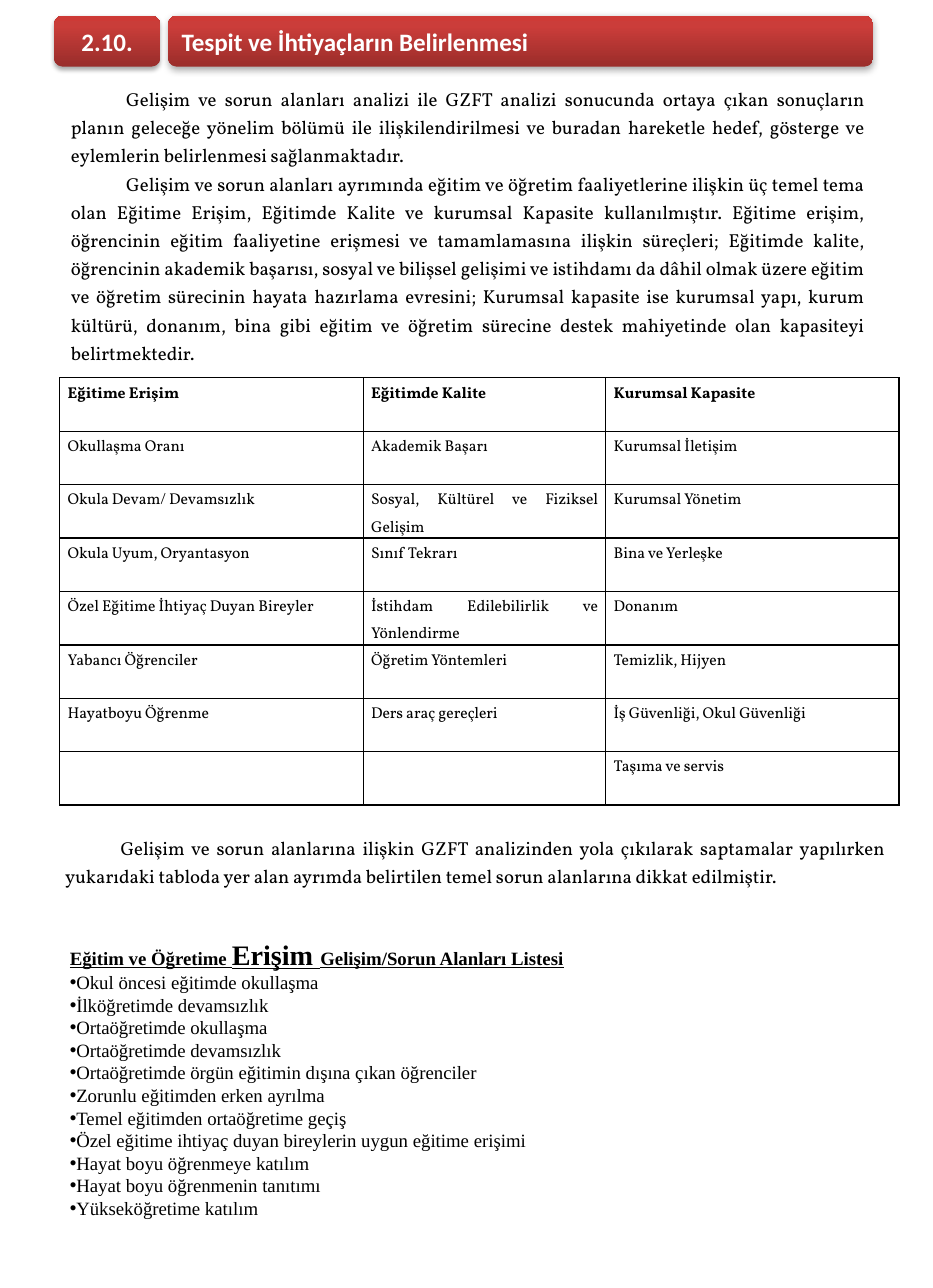
"""Build the findings and needs page of a school strategy plan."""
from typing import NamedTuple

from lxml import etree
from pptx import Presentation
from pptx.dml.color import RGBColor
from pptx.enum.shapes import MSO_SHAPE
from pptx.enum.text import MSO_ANCHOR, MSO_AUTO_SIZE, PP_ALIGN
from pptx.oxml.ns import qn
from pptx.util import Emu, Inches, Pt

ROUND = MSO_SHAPE.ROUNDED_RECTANGLE
MIDDLE = MSO_ANCHOR.MIDDLE
GROW = MSO_AUTO_SIZE.SHAPE_TO_FIT_TEXT
LEFT, CENTER, JUSTIFY = PP_ALIGN.LEFT, PP_ALIGN.CENTER, PP_ALIGN.JUSTIFY
BLACK = RGBColor(0x00, 0x00, 0x00)
WHITE = RGBColor(0xFF, 0xFF, 0xFF)
TITLE_REDS = (RGBColor(0x9B, 0x2D, 0x2A), RGBColor(0xCB, 0x3D, 0x3A), RGBColor(0xCE, 0x3B, 0x37))
BADGE_REDS = (RGBColor(0x99, 0x2D, 0x2B), RGBColor(0xC9, 0x3D, 0x39), RGBColor(0xCD, 0x3A, 0x36))
STOPS = (0, 80, 100)
WIDTH, HEIGHT = Inches(8.27), Inches(11.42)
BODY, LIST, HEAD = "Vollkorn", "Times New Roman", "Calibri"
FIRST, HANG = 0.49, -0.08
EDGES = ("a:lnL", "a:lnR", "a:lnT", "a:lnB")


class Box(NamedTuple):
    """A place on the slide, in percent of its width and height."""
    x: float
    y: float
    w: float
    h: float

    def emu(self) -> tuple:
        """Give left, top, width and height."""
        pairs = zip(self, (WIDTH, HEIGHT, WIDTH, HEIGHT))
        return tuple(Emu(round(full * part / 100)) for part, full in pairs)


class Part(NamedTuple):
    """A stretch of text in one size."""
    text: str
    size: float


class Banner(NamedTuple):
    """A red heading bar."""
    box: Box
    text: str
    reds: tuple
    blur: float
    align: int


BANNERS = (
    Banner(Box(18.02, 1.23, 75.57, 3.94), "Tespit ve İhtiyaçların Belirlenmesi", TITLE_REDS, 5, LEFT),
    Banner(Box(5.8, 1.23, 11.37, 3.94), "2.10.", BADGE_REDS, 3.1, CENTER),
)
INTRO_BOX = Box(6.41, 5.95, 87.55, 22.85)
INTRO = (
    "Gelişim ve sorun alanları analizi ile GZFT analizi sonucunda ortaya çıkan sonuçların planın "
    "geleceğe yönelim bölümü ile ilişkilendirilmesi ve buradan hareketle hedef, gösterge ve "
    "eylemlerin belirlenmesi sağlanmaktadır.",
    "Gelişim ve sorun alanları ayrımında eğitim ve öğretim faaliyetlerine ilişkin üç temel tema olan "
    "Eğitime Erişim, Eğitimde Kalite ve kurumsal Kapasite kullanılmıştır. Eğitime erişim, öğrencinin "
    "eğitim faaliyetine erişmesi ve tamamlamasına ilişkin süreçleri; Eğitimde kalite, öğrencinin "
    "akademik başarısı, sosyal ve bilişsel gelişimi ve istihdamı da dâhil olmak üzere eğitim ve "
    "öğretim sürecinin hayata hazırlama evresini; Kurumsal kapasite ise kurumsal yapı, kurum kültürü, "
    "donanım, bina gibi eğitim ve öğretim sürecine destek mahiyetinde olan kapasiteyi belirtmektedir.",
)
NOTE_BOX = Box(5.8, 64.1, 90.33, 5.17)
NOTE = (
    "Gelişim ve sorun alanlarına ilişkin GZFT analizinden yola çıkılarak saptamalar yapılırken "
    "yukarıdaki tabloda yer alan ayrımda belirtilen temel sorun alanlarına dikkat edilmiştir.",
)
TABLE_BOX = Box(6.41, 29.33, 89.96, 33.19)
SHARES = (36.16, 28.9, 34.94)
ROWS = (
    ("Eğitime Erişim", "Eğitimde Kalite", "Kurumsal Kapasite"),
    ("Okullaşma Oranı", "Akademik Başarı", "Kurumsal İletişim"),
    ("Okula Devam/ Devamsızlık", "Sosyal, Kültürel ve Fiziksel Gelişim", "Kurumsal Yönetim"),
    ("Okula Uyum, Oryantasyon", "Sınıf Tekrarı", "Bina ve Yerleşke"),
    ("Özel Eğitime İhtiyaç Duyan Bireyler", "İstihdam Edilebilirlik ve Yönlendirme", "Donanım"),
    ("Yabancı Öğrenciler", "Öğretim Yöntemleri", "Temizlik, Hijyen"),
    ("Hayatboyu Öğrenme", "Ders araç gereçleri", "İş Güvenliği, Okul Güvenliği"),
    ("", "", "Taşıma ve servis"),
)
LIST_BOX = Box(6.29, 72.33, 90.33, 26.53)
LIST_HEAD = (
    Part("Eğitim ve Öğretime ", 12),
    Part("Erişim ", 18),
    Part("Gelişim/Sorun Alanları Listesi", 12),
)
ITEMS = (
    "Okul öncesi eğitimde okullaşma",
    "İlköğretimde devamsızlık",
    "Ortaöğretimde okullaşma",
    "Ortaöğretimde devamsızlık",
    "Ortaöğretimde örgün eğitimin dışına çıkan öğrenciler",
    "Zorunlu eğitimden erken ayrılma",
    "Temel eğitimden ortaöğretime geçiş",
    "Özel eğitime ihtiyaç duyan bireylerin uygun eğitime erişimi",
    "Hayat boyu öğrenmeye katılım",
    "Hayat boyu öğrenmenin tanıtımı",
    "Yükseköğretime katılım",
)


def add_tag(parent, tag: str, **attrs):
    """Append one XML element."""
    names = {key: str(value) for key, value in attrs.items()}
    return etree.SubElement(parent, qn(tag), names)


def add_color(parent, color: RGBColor):
    """Append a colour element."""
    return add_tag(parent, "a:srgbClr", val=color)


def write(frame, text: str | tuple[Part, ...], *, size: float = 12, font: str = BODY,
          color: RGBColor = BLACK, bold: bool = False, under: bool = False,
          align: int = LEFT, indent: float = 0, space: float = 1, mark: str = "") -> None:
    """Add a paragraph in the given format."""
    line = frame.paragraphs[0]
    if line.runs:
        line = frame.add_paragraph()
    props = line._p.get_or_add_pPr()
    props.set("marL", "0")
    props.set("indent", str(Inches(indent)))
    line.alignment, line.line_spacing = align, space
    if mark:
        add_color(add_tag(props, "a:buClr"), color)
        add_tag(props, "a:buFont", typeface="Arial")
        add_tag(props, "a:buChar", char=mark)
    parts = (Part(text, size),) if isinstance(text, str) else text
    for part in parts:
        run = line.add_run()
        run.text = part.text
        run.font.size, run.font.name = Pt(part.size), font
        run.font.bold, run.font.underline = bold, under
        run.font.color.rgb = color


def add_frame(slide, box: Box):
    """Add a wrapping text box and give its frame."""
    frame = slide.shapes.add_textbox(*box.emu()).text_frame
    frame.word_wrap, frame.auto_size = True, GROW
    return frame


def add_prose(slide, box: Box, texts: tuple[str, ...]) -> None:
    """Add justified paragraphs with a first-line indent."""
    frame = add_frame(slide, box)
    for text in texts:
        write(frame, text, align=JUSTIFY, indent=FIRST, space=1.25)


def add_list(slide) -> None:
    """Add the heading and the bullets of the problem areas."""
    frame = add_frame(slide, LIST_BOX)
    write(frame, LIST_HEAD, font=LIST, bold=True, under=True)
    for item in ITEMS:
        write(frame, item, font=LIST, indent=HANG, mark="•")


def add_table(slide) -> None:
    """Add the table of themes."""
    shape = slide.shapes.add_table(len(ROWS), len(SHARES), *TABLE_BOX.emu())
    table, full = shape.table, shape.width
    table.first_row = table.horz_banding = False
    for column, share in zip(table.columns, SHARES):
        column.width = Emu(round(full * share / 100))
    for r, row in enumerate(ROWS):
        for c, text in enumerate(row):
            cell = table.cell(r, c)
            cell.margin_left = cell.margin_right = Inches(0.07)
            cell.margin_top = cell.margin_bottom = 0
            props = cell._tc.get_or_add_tcPr()
            for edge in EDGES:
                line = add_tag(props, edge, w=Pt(1))
                add_color(add_tag(line, "a:solidFill"), BLACK)
            cell.fill.background()
            write(cell.text_frame, text, size=10, bold=r == 0, align=JUSTIFY, space=1.25)


def add_banner(group, item: Banner) -> None:
    """Add a heading bar with a gradient and a soft shadow."""
    shape = group.shapes.add_shape(ROUND, *item.box.emu())
    shape.line.fill.background()
    shape.shadow.inherit = False
    shape.fill.gradient()
    shape.fill.gradient_angle = 90
    props = shape._element.spPr
    stops = props.find(f".//{qn('a:gsLst')}")
    stops.clear()
    for stop, red in zip(STOPS, item.reds):
        add_color(add_tag(stops, "a:gs", pos=stop * 1000), red)
    shade = add_tag(props.find(qn("a:effectLst")), "a:outerShdw", blurRad=Pt(item.blur),
                    dist=Pt(1.8), dir=90 * 60000, rotWithShape=0)
    add_tag(add_color(shade, BLACK), "a:alpha", val=35000)
    frame = shape.text_frame
    frame.word_wrap, frame.vertical_anchor = True, MIDDLE
    write(frame, item.text, size=16, font=HEAD, color=WHITE, bold=True, align=item.align)


def main() -> None:
    """Build and save the slide."""
    deck = Presentation()
    deck.slide_width, deck.slide_height = WIDTH, HEIGHT
    slide = deck.slides.add_slide(deck.slide_layouts[6])
    add_list(slide)
    add_prose(slide, INTRO_BOX, INTRO)
    add_table(slide)
    add_prose(slide, NOTE_BOX, NOTE)
    group = slide.shapes.add_group_shape()
    for item in BANNERS:
        add_banner(group, item)
    deck.save("out.pptx")


if __name__ == "__main__":
    main()
